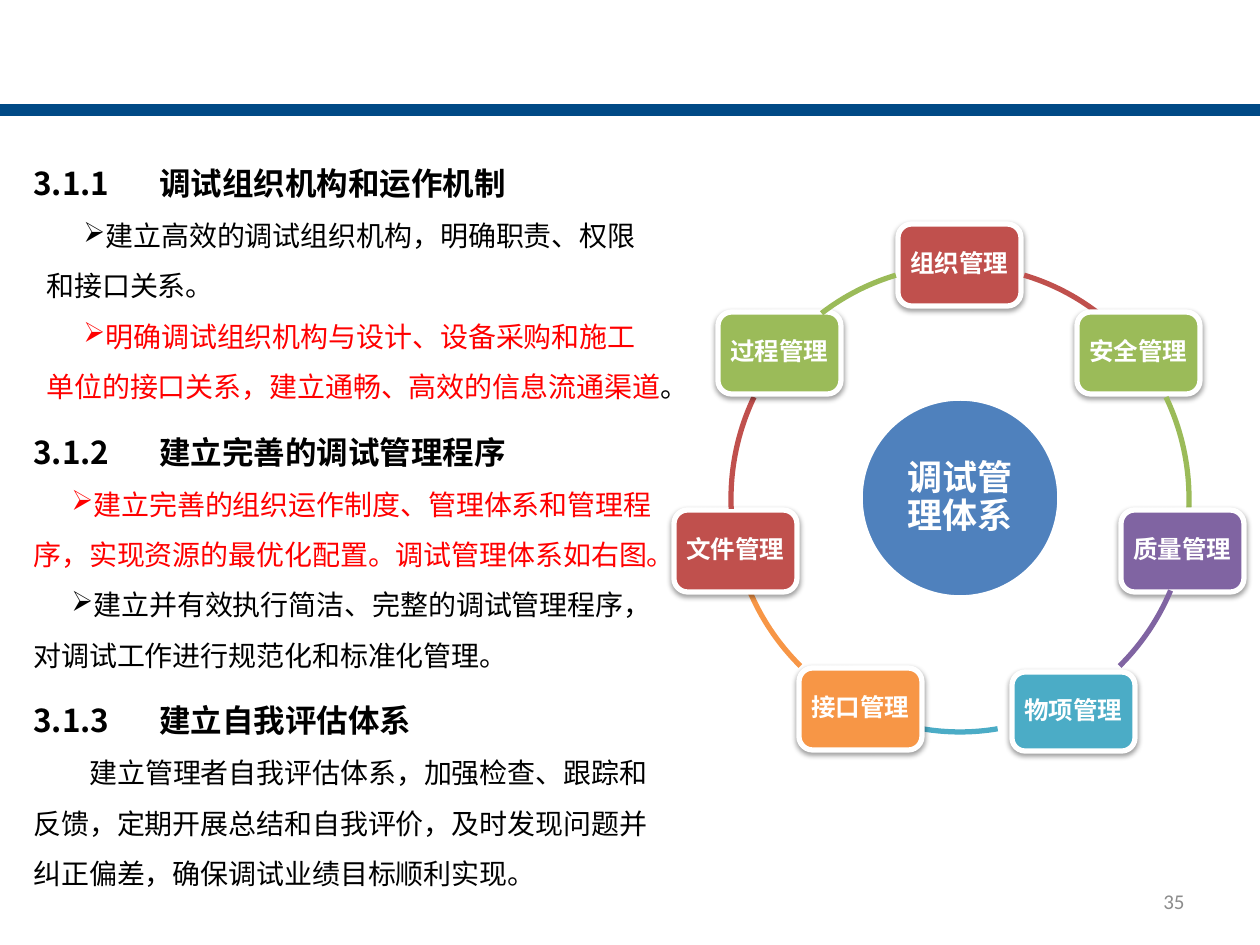
from lxml.etree import SubElement as Sub
from pptx import Presentation
from pptx.dml.color import RGBColor as RGB
from pptx.enum.shapes import MSO_SHAPE as Geo
from pptx.enum.text import MSO_ANCHOR as Anchor, PP_ALIGN as Align
from pptx.oxml.ns import qn
from pptx.util import Emu, Pt

NAVY = RGB(0x00, 0x4A, 0x86)
BLUE = RGB(0x4F, 0x81, 0xBD)
RED = RGB(0xC0, 0x50, 0x4D)
GREEN = RGB(0x9B, 0xBB, 0x59)
PURPLE = RGB(0x80, 0x64, 0xA2)
TEAL = RGB(0x4B, 0xAC, 0xC6)
ORANGE = RGB(0xF7, 0x96, 0x46)
ALERT = RGB(0xFF, 0x00, 0x00)
GRAY = RGB(0x8C, 0x8C, 0x8C)
BLACK = RGB(0x00, 0x00, 0x00)
WHITE = RGB(0xFF, 0xFF, 0xFF)

CJK = "Noto Sans CJK SC"
LATIN = "Calibri"


def px(n):
    return Emu(round(n * 914400 / 126))


def write(par, text, size=16, color=BLACK, bold=False, font=CJK):
    run = par.add_run()
    run.text = text
    face = run.font
    face.size, face.bold, face.name = Pt(size), bold, font
    face.color.rgb = color
    Sub(run._r.rPr, qn("a:ea"), typeface=CJK)


class Deck:
    def __init__(self, width, height):
        self.prs = Presentation()
        self.prs.slide_width, self.prs.slide_height = px(width), px(height)
        self.slide = self.prs.slides.add_slide(self.prs.slide_layouts[6])

    def shape(self, kind, box, fill=None, line=WHITE, width=2):
        item = self.slide.shapes.add_shape(kind, *map(px, box))
        item.shadow.inherit = False
        if fill is None:
            item.fill.background()
        else:
            item.fill.solid()
            item.fill.fore_color.rgb = fill
        item.line.color.rgb = line
        item.line.width = Pt(width)
        return item

    def label(self, item, text, size, inset):
        frame = item.text_frame
        frame.word_wrap = True
        frame.vertical_anchor = Anchor.MIDDLE
        frame.margin_left = frame.margin_right = px(inset)
        frame.margin_top = frame.margin_bottom = px(inset)
        par = frame.paragraphs[0]
        par.alignment, par.line_spacing = Align.CENTER, 0.9
        write(par, text, size, WHITE, True, LATIN)

    def card(self, box, text, fill):
        item = self.shape(Geo.ROUNDED_RECTANGLE, box, fill, width=3)
        glow = Sub(item._element.spPr.find(qn("a:effectLst")), qn("a:outerShdw"),
                   blurRad=str(Pt(3.1)), dist=str(Pt(1.6)), dir="5400000",
                   rotWithShape="0")
        tone = Sub(glow, qn("a:srgbClr"), val="000000")
        Sub(tone, qn("a:alpha"), val="38000")
        self.label(item, text, 14, 5)

    def arc(self, box, start, end, color):
        item = self.shape(Geo.ARC, box, line=color, width=3)
        # Angles are stored in 1/60000 degree, adjustments in 1/100000
        item.adjustments[0] = start * 0.6
        item.adjustments[1] = end * 0.6

    def text(self, box):
        frame = self.slide.shapes.add_textbox(*map(px, box)).text_frame
        frame.word_wrap = True
        return frame

    def par(self, frame, runs, left=0, first=0, bullet=None, tab=None,
            before=0, **style):
        par = frame.paragraphs[0]
        if par.runs:
            par = frame.add_paragraph()
        par.line_spacing = 1.5
        if before:
            par.space_before = Pt(before)
        props = par._p.get_or_add_pPr()
        props.set("marL", str(px(left)))
        props.set("indent", str(px(first)))
        if bullet:
            Sub(props, qn("a:buChar"), char=bullet)
        if tab:
            Sub(Sub(props, qn("a:tabLst")), qn("a:tab"), pos=str(px(tab)), algn="l")
        for text, color in runs:
            write(par, text, color=color, **style)


def main():
    deck = Deck(1260, 945)

    # Header bar
    deck.shape(Geo.RECTANGLE, (0, 106, 1260, 8), NAVY, NAVY)

    # Left column
    body = deck.text((21, 139, 655, 765))

    def head(number, title, tab, before=6):
        deck.par(body, [(f"{number}\t{title}", BLACK)], tab=tab, before=before,
                 size=18, bold=True)

    def point(*runs, left=0, first=38):
        deck.par(body, runs, left, first, "➢")

    head("3.1.1", "调试组织机构和运作机制", 91, 0)
    point(("建立高效的调试组织机构，明确职责、权限和接口关系。", BLACK), left=13, first=37)
    point(("明确调试组织机构与设计、设备采购和施工单位的接口关系，"
           "建立通畅、高效的信息流通渠道", ALERT), ("。", BLACK), left=13, first=37)
    head("3.1.2", "建立完善的调试管理程序", 98)
    point(("建立完善的组织运作制度、管理体系和管理程序，"
           "实现资源的最优化配置。调试管理体系如右图。", ALERT))
    point(("建立并有效执行简洁、完整的调试管理程序，"
           "对调试工作进行规范化和标准化管理。", BLACK))
    head("3.1.3", "建立自我评估体系", 98)
    deck.par(body, [("建立管理者自我评估体系，加强检查、跟踪和反馈，定期开展总结和自我评价，"
                     "及时发现问题并纠正偏差，确保调试业绩目标顺利实现。", BLACK)], first=56)

    # Hub of the ring
    hub = deck.shape(Geo.OVAL, (861, 399, 198, 198), BLUE)
    deck.label(hub, "调试管理体系", 20, 6)

    # Cards, clockwise from the top
    cards = [
        ("组织管理", 898, 224, 82, RED),
        ("安全管理", 1077, 312, 82, GREEN),
        ("质量管理", 1121, 510, 82, PURPLE),
        ("物项管理", 1012, 672, 79, TEAL),
        ("接口管理", 799, 668, 82, ORANGE),
        ("文件管理", 674, 510, 82, RED),
        ("过程管理", 718, 312, 82, GREEN),
    ]
    # Arcs after each card; the left half mirrors the right
    right = [(286, 306.7), (333.7, 2.5), (23.5, 46.3)]
    left = [((180 - b) % 360, (180 - a) % 360) for a, b in reversed(right)]
    spans = right + [(80.7, 99.3)] + left
    for (name, x, y, high, color), (start, end) in zip(cards, spans):
        deck.card((x, y, 123, high), name, color)
        deck.arc((731, 266, 458, 466), start, end, color)

    # Page number
    foot = deck.text((903, 876, 294, 50))
    foot.vertical_anchor = Anchor.MIDDLE
    foot.paragraphs[0].alignment = Align.RIGHT
    write(foot.paragraphs[0], "35", 12, GRAY, font=LATIN)

    deck.prs.save("out.pptx")


if __name__ == "__main__":
    main()
